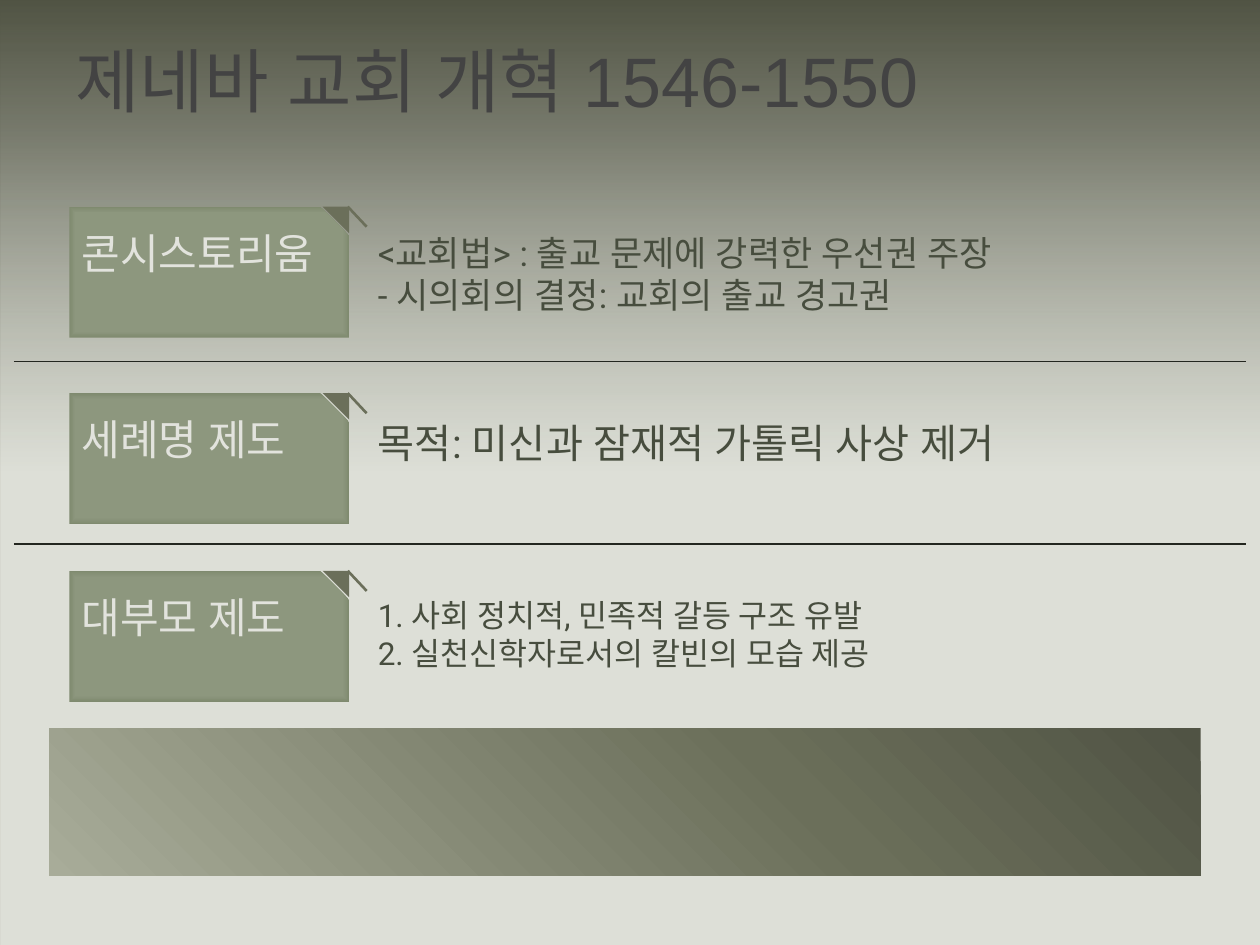
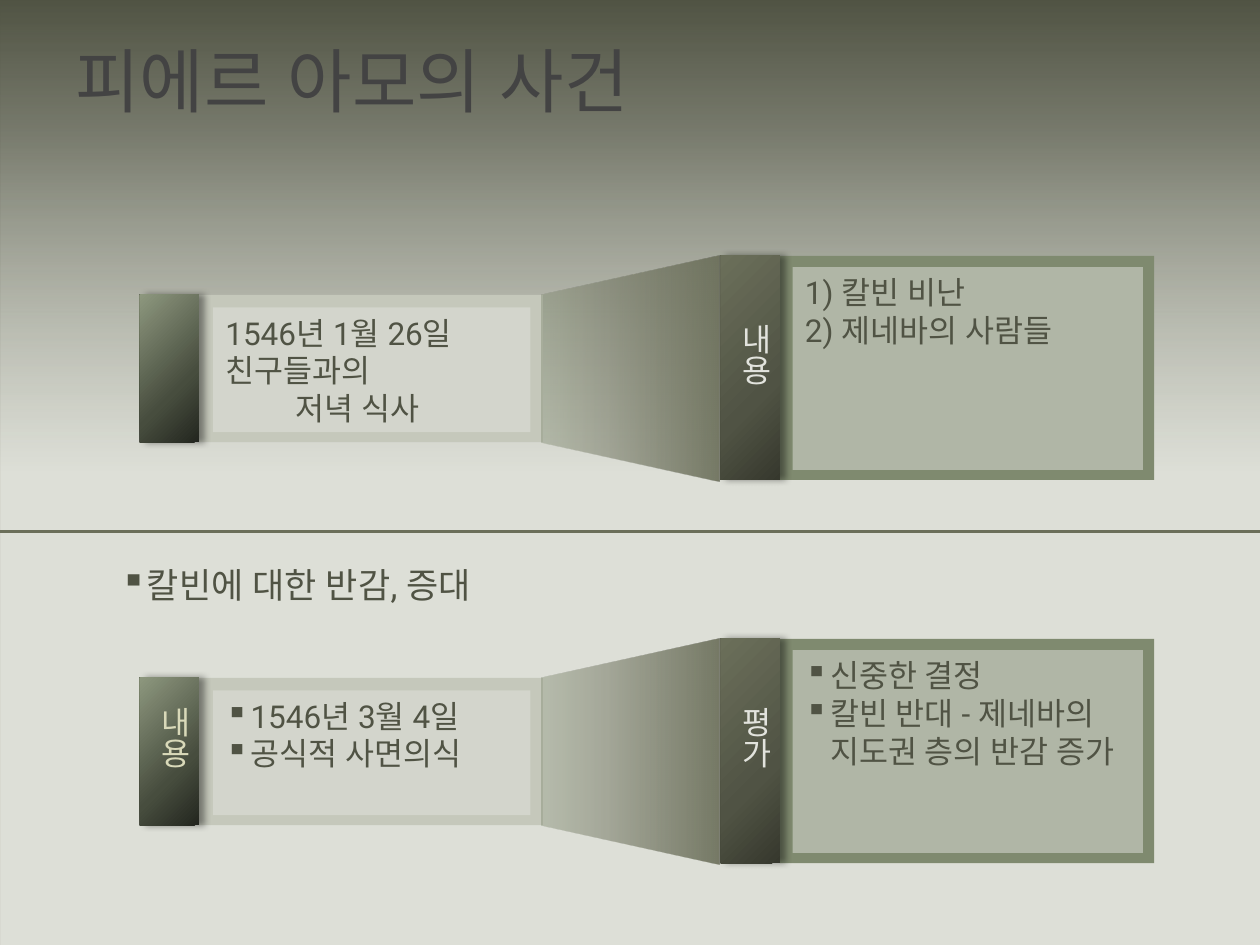
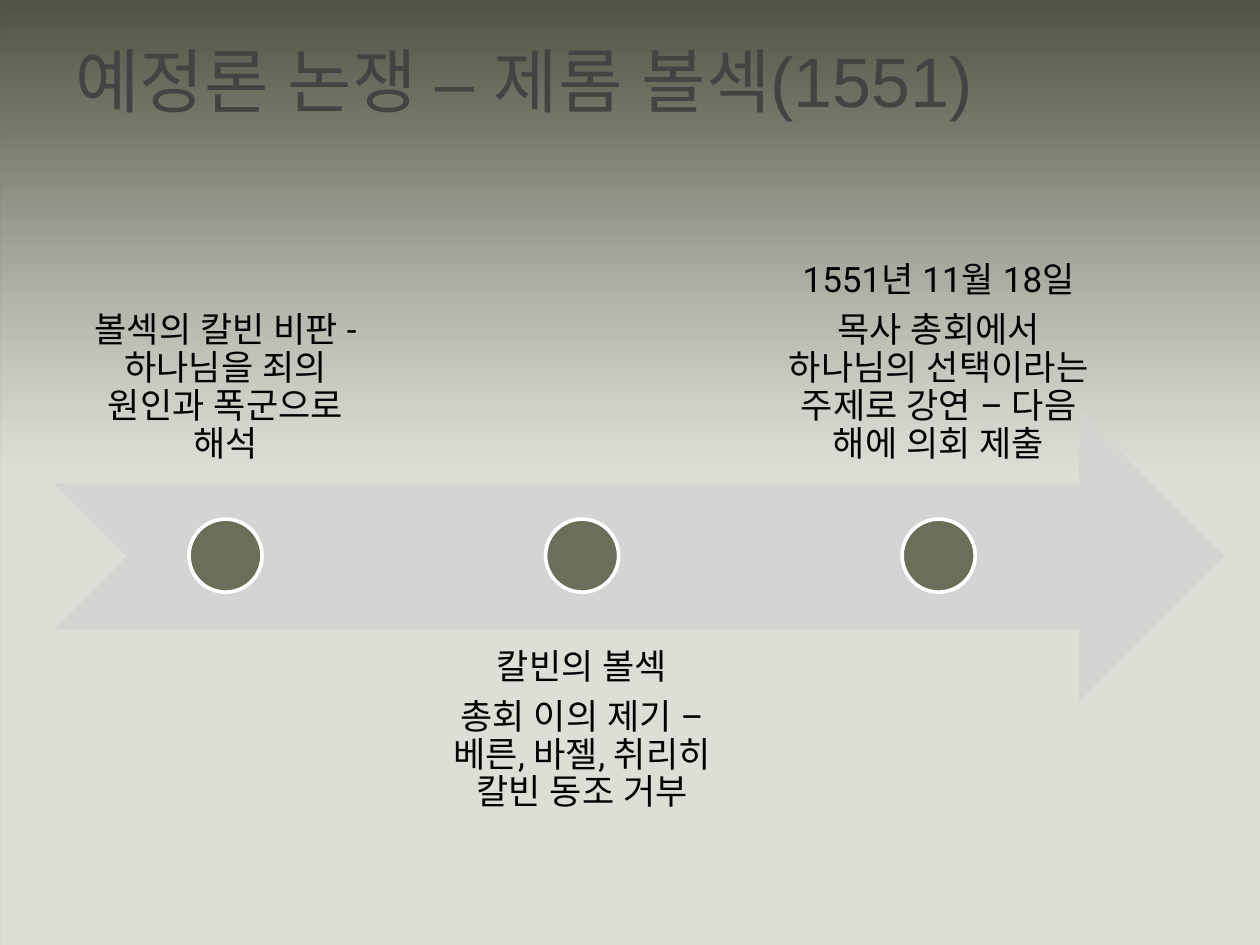
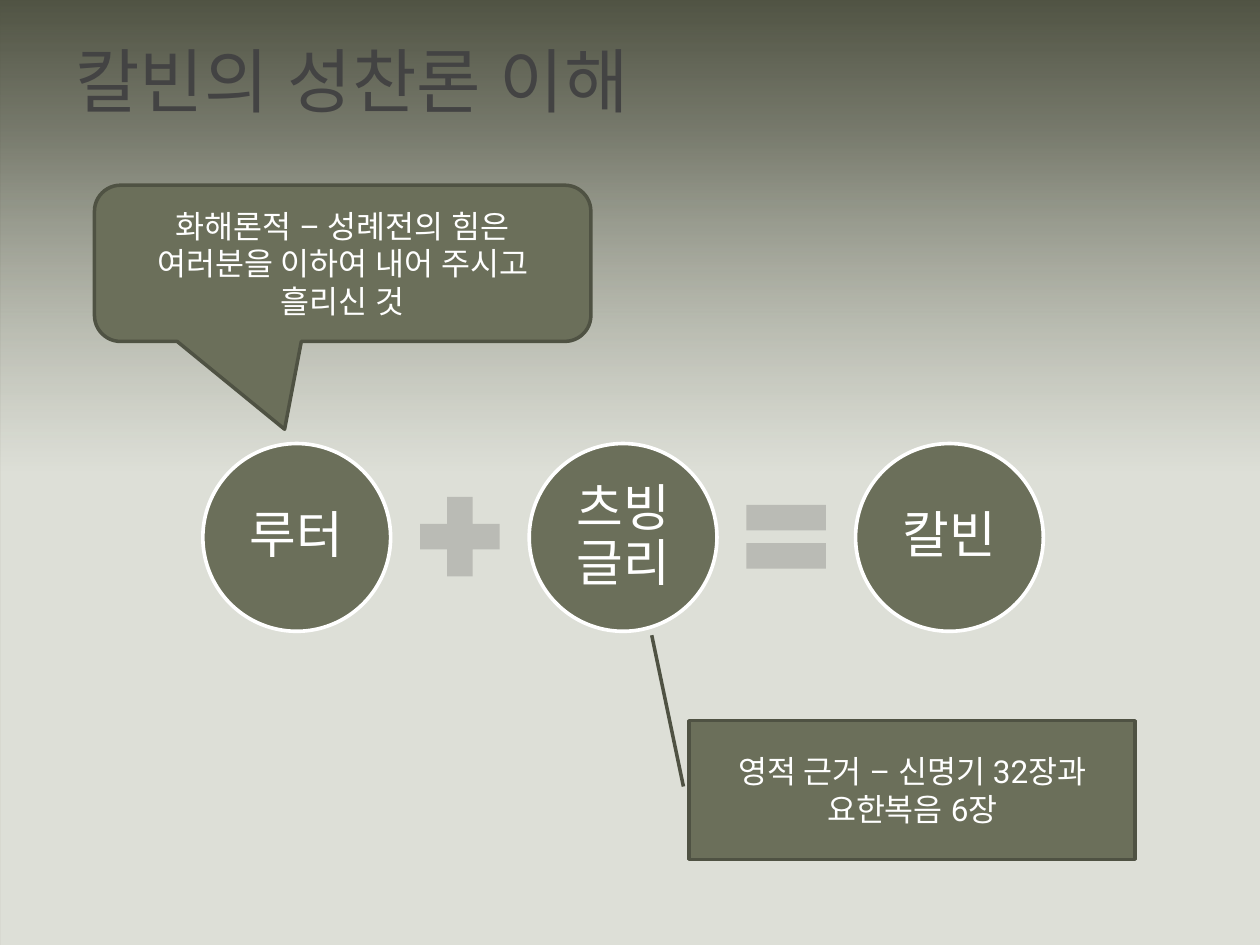
from pptx import Presentation
from pptx.dml.color import RGBColor
from pptx.enum.shapes import MSO_CONNECTOR, MSO_SHAPE
from pptx.enum.text import MSO_ANCHOR, MSO_AUTO_SIZE, PP_ALIGN
from pptx.oxml import parse_xml
from pptx.oxml.ns import nsdecls, qn
from pptx.util import Inches, Pt

# Grid: 10 columns by 7.5 rows, one inch per cell
COLS, ROWS = 10, 7.5

# Palette
OLIVE, DARK_OLIVE, EDGE = "6B6F5A", "505344", "4F5243"
SAGE, MOSS, FOREST, INK = "8D977E", "7F8A6F", "474D3E", "23261F"
STONE, PALE, MIST, WHITE = "A8AC99", "E2E3DD", "DDDFD7", "FFFFFF"
BODY_FONT, TITLE_FONT = "Roboto", "Arial"


# ---- Colour and fill ----
def rgb(hex_code):
    return RGBColor.from_string(hex_code)


def gradient(stops, angle=None, path="circle", focus=None):
    """Stops are (percent, colour[, opacity]); focus is l, t, r, b in percent."""
    gs = "".join(
        f'<a:gs pos="{pos * 1000}"><a:srgbClr val="{c}">'
        + "".join(f'<a:alpha val="{a * 1000}"/>' for a in alpha)
        + "</a:srgbClr></a:gs>" for pos, c, *alpha in stops)
    if focus:
        sides = " ".join(f'{k}="{v * 1000}"' for k, v in zip("ltrb", focus))
        way = f'<a:path path="{path}"><a:fillToRect {sides}/></a:path>'
    else:
        way = f'<a:lin ang="{angle * 60000}" scaled="0"/>'
    return (f'<a:gradFill {nsdecls("a")} rotWithShape="1">'
            f'<a:gsLst>{gs}</a:gsLst>{way}</a:gradFill>')


def veil(color, opacity):
    return (f'<a:solidFill {nsdecls("a")}><a:srgbClr val="{color}">'
            f'<a:alpha val="{opacity * 1000}"/></a:srgbClr></a:solidFill>')


def paint(sp, fill):
    """Fill with a hex colour or with fill markup."""
    if fill.startswith("<"):
        sp.fill.background()
        blank = sp._element.spPr.find(qn("a:noFill"))
        blank.getparent().replace(blank, parse_xml(fill))
    else:
        sp.fill.solid()
        sp.fill.fore_color.rgb = rgb(fill)


TAG_FILL = gradient([(0, SAGE), (90, SAGE), (100, MOSS)],
                    path="rect", focus=(50, 50, 50, 50))
BAR_FILL = gradient([(0, STONE), (64, OLIVE), (100, DARK_OLIVE)],
                    focus=(0, 100, 100, 0))
GREEN_TAB = gradient([(0, SAGE), (64, FOREST), (100, INK)],
                     focus=(0, 0, 100, 100))
OLIVE_TAB = gradient([(0, OLIVE), (64, DARK_OLIVE), (100, "36382D")],
                     focus=(0, 0, 100, 100))
FUNNEL_FILL = gradient([(0, MOSS, 41), (38, OLIVE, 50), (100, OLIVE, 90)],
                       angle=90)


# ---- Elements ----
def place(at):
    return [Inches(v) for v in at]


def add_text(sp, lines, size=18, color=DARK_OLIVE, font=BODY_FONT,
             align=PP_ALIGN.LEFT, anchor=MSO_ANCHOR.TOP, wrap=True, inset=None,
             bullet=None, hang=0, before=0, after=0, spacing=None, vert=None):
    """A line is text, or (text, left indent) for a line set further in."""
    tf = sp.text_frame
    tf.word_wrap, tf.vertical_anchor = wrap, anchor
    if inset is not None:
        tf.margin_left = tf.margin_top = Inches(inset)
        tf.margin_right = tf.margin_bottom = Inches(inset)
    if vert:
        tf._txBody.bodyPr.set("vert", vert)
    for i, line in enumerate(lines):
        text, indent = line if isinstance(line, tuple) else (line, None)
        p = tf.paragraphs[0] if i == 0 else tf.add_paragraph()
        p.alignment, p.line_spacing = align, spacing
        p.space_before, p.space_after = Pt(before), Pt(after)
        pPr = p._p.get_or_add_pPr()
        if indent or hang:
            pPr.set("marL", str(Inches(indent or hang)))
            pPr.set("indent", str(0 if indent else -Inches(hang)))
        if bullet:
            pPr.append(parse_xml(f'<a:buChar {nsdecls("a")} char="{bullet}"/>'))
        r = p.add_run()
        r.text = text
        r.font.size, r.font.name = Pt(size), font
        r.font.color.rgb = rgb(color)
        r._r.get_or_add_rPr().append(
            parse_xml(f'<a:ea {nsdecls("a")} typeface="{font}"/>'))


def add_box(shapes, kind, at, fill, line=None, width=2, adj=(), rotation=0,
            flip=False, shadow=False, lines=(), **fmt):
    sp = shapes.add_shape(kind, *place(at))
    sp.shadow.inherit = False
    paint(sp, fill)
    if line:
        sp.line.color.rgb, sp.line.width = rgb(line), Pt(width)
    else:
        sp.line.fill.background()
    for i, value in enumerate(adj):
        sp.adjustments[i] = value
    sp.rotation = rotation
    spPr = sp._element.spPr
    if flip:
        spPr.get_or_add_xfrm().set("flipH", "1")
    if shadow:
        spPr.find(qn("a:effectLst")).append(parse_xml(
            f'<a:outerShdw {nsdecls("a")} blurRad="{Pt(4)}" dist="{Pt(3)}" '
            'dir="0" algn="l" rotWithShape="0"><a:srgbClr val="000000">'
            '<a:alpha val="40000"/></a:srgbClr></a:outerShdw>'))
    if lines:
        add_text(sp, lines, **fmt)
    return sp


def add_note(shapes, at, lines, grow=True, **fmt):
    tb = shapes.add_textbox(*place(at))
    add_text(tb, lines, **fmt)
    if grow:
        tb.text_frame.auto_size = MSO_AUTO_SIZE.SHAPE_TO_FIT_TEXT


def add_line(shapes, start, end, color, width):
    cx = shapes.add_connector(MSO_CONNECTOR.STRAIGHT, *place(start + end))
    cx.line.color.rgb, cx.line.width = rgb(color), Pt(width)
    cx._element.spPr.append(parse_xml(f'<a:effectLst {nsdecls("a")}/>'))


# ---- Shared look ----
def add_slide(prs, title):
    s = prs.slides.add_slide(prs.slide_layouts[5])
    sp = s.shapes.title
    sp.left, sp.top, sp.width, sp.height = place((0.5, 0.19, 9, 0.88))
    add_text(sp, [title], size=40, color="434343", font=TITLE_FONT,
             anchor=MSO_ANCHOR.MIDDLE)
    return s


def style_master(prs, s):
    """Colour the master and lay its two fading sheets behind everything."""
    master = prs.slide_master
    master.background.fill.solid()
    master.background.fill.fore_color.rgb = rgb("505343")
    sheets = [
        (1.09, [(0, STONE, 0), (50, STONE, 60), (100, STONE, 80)]),
        (0, [(0, MIST, 0), (50, MIST), (100, MIST)]),
    ]
    for i, (top, stops) in enumerate(sheets):
        sheet = add_box(s.shapes, MSO_SHAPE.RECTANGLE,
                        (0, top, COLS, ROWS - top), gradient(stops, angle=90))
        sheet._element.nvSpPr.cNvPr.set("id", str(100 + i))
        master.shapes._spTree.insert(2 + i, sheet._element)


# ---- Slide 1: tagged rows ----
def add_tag_row(s, top, label, lines, size, height):
    g = s.shapes.add_group_shape().shapes
    add_line(g, (2.76, top), (2.91, top + 0.16), OLIVE, 1.5)
    add_box(g, MSO_SHAPE.RIGHT_TRIANGLE, (2.56, top, 0.21, 0.21), OLIVE,
            rotation=270, flip=True)
    add_note(s.shapes, (2.9, top + 0.15, 6.09, height), lines,
             size=size, color=FOREST)
    add_box(s.shapes, MSO_SHAPE.SNIP_1_RECTANGLE, (0.55, top, 2.22, 1.04),
            TAG_FILL, adj=[0.22], lines=[label], size=24, color=PALE,
            wrap=False)


def build_reform(s):
    for y in (2.87, 4.32):
        add_line(s.shapes, (0.11, y), (COLS - 0.11, y), INK, 1)
    add_box(s.shapes, MSO_SHAPE.RECTANGLE, (0.39, 5.78, 9.14, 1.17), BAR_FILL)
    add_tag_row(s, 1.64, "콘시스토리움",
                ["<교회법> : 출교 문제에 강력한 우선권 주장",
                 "- 시의회의 결정: 교회의 출교 경고권"], 20, 0.77)
    add_tag_row(s, 3.12, "세례명 제도",
                ["목적: 미신과 잠재적 가톨릭 사상 제거"], 23, 0.49)
    add_tag_row(s, 4.53, "대부모 제도",
                ["1. 사회 정치적, 민족적 갈등 구조 유발",
                 "2. 실천신학자로서의 칼빈의 모습 제공"], 18, 0.7)


# ---- Slide 2: small panel widening into a large one ----
def add_panel(s, left, top, width, height, frame, tab, inner, lines, bullet,
              label, label_color):
    g = s.shapes.add_group_shape().shapes
    rect, tab_w = MSO_SHAPE.RECTANGLE, 0.47
    add_box(g, rect, (left + tab_w, top, width, height), frame)
    add_box(g, rect, (left, top, tab_w, height), tab, shadow=True)
    add_box(g, rect, inner, veil(PALE, 50), lines=lines, bullet=bullet,
            hang=0.2)
    return label and add_note(g, (left - 0.04, label[1], 0.52, 0.6),
                              [label[0]], color=label_color, wrap=False,
                              vert="eaVert")


def add_flow(s, top, cause, effect, cause_label, effect_label, bullet=None):
    label_top = top + 0.44
    add_panel(s, 1.11, top + 0.31, 2.73, 1.17, "C5C8BB", GREEN_TAB,
              (1.69, top + 0.41, 2.52, 0.99), cause, bullet,
              cause_label and (cause_label, label_top), "D9D9B9")
    add_box(s.shapes, MSO_SHAPE.TRAPEZOID, (4.11, top + 0.19, 1.79, 1.41),
            FUNNEL_FILL, adj=[0.22], rotation=270)
    add_panel(s, 5.72, top, 2.97, 1.78, MOSS, OLIVE_TAB,
              (6.29, top + 0.09, 2.78, 1.61), effect, bullet,
              (effect_label, label_top), PALE)


def build_affair(s):
    add_line(s.shapes, (COLS, 4.22), (0, 4.22), OLIVE, 1.5)
    add_flow(s, 2.03,
             ["1546년 1월 26일", "친구들과의", ("저녁 식사", 0.56)],
             ["1) 칼빈 비난", "2) 제네바의 사람들"], None, "내용")
    add_note(s.shapes, (0.86, 4.42, 8.26, 0.43), ["칼빈에 대한 반감, 증대"],
             size=20, bullet="▪", hang=0.2, before=1)
    add_flow(s, 5.07,
             ["1546년 3월 4일", "공식적 사면의식"],
             ["신중한 결정", "칼빈 반대 - 제네바의 지도권 층의 반감 증가"],
             "내용", "평가", bullet="▪")


# ---- Slide 3: timeline ----
def build_dispute(s):
    add_box(s.shapes, MSO_SHAPE.NOTCHED_RIGHT_ARROW, (0.43, 3.26, 9.29, 2.31),
            "D4D5D2", adj=[0.5, 0.5])
    events = [
        ["볼섹의 칼빈 비판 - 하나님을 죄의 원인과 폭군으로 해석"],
        ["칼빈의 볼섹",
         "총회 이의 제기 – 베른, 바젤, 취리히 칼빈 동조 거부"],
        ["1551년 11월 18일",
         "목사 총회에서 하나님의 선택이라는 주제로 강연 – 다음 해에 의회 제출"],
    ]
    step, width, dot = 2.83, 2.7, 0.58
    for i, lines in enumerate(events):
        left, below = 0.44 + i * step, i % 2
        add_note(s.shapes, (left, 4.99 if below else 1.53, width, 2.31), lines,
                 grow=False, size=20, color="000000", align=PP_ALIGN.CENTER,
                 anchor=MSO_ANCHOR.TOP if below else MSO_ANCHOR.BOTTOM,
                 inset=0.16, spacing=0.9, after=7)
        add_box(s.shapes, MSO_SHAPE.OVAL,
                (left + (width - dot) / 2, 4.12, dot, dot),
                OLIVE, line=WHITE, width=2.08)


# ---- Slide 4: equation with callouts ----
def build_supper(s):
    centred = dict(color=WHITE, align=PP_ALIGN.CENTER,
                   anchor=MSO_ANCHOR.MIDDLE)
    first, step, disc, sign = 1.61, 2.59, 1.49, 0.86
    for i, name in enumerate(["루터", "츠빙글리", "칼빈"]):
        add_box(s.shapes, MSO_SHAPE.OVAL, (first + i * step, 3.52, disc, disc),
                OLIVE, line=WHITE, width=2.08, lines=[name], size=29,
                inset=0.04, spacing=0.9, **centred)
    signs = [(MSO_SHAPE.MATH_PLUS, [0.235]),
             (MSO_SHAPE.MATH_EQUAL, [0.235, 0.118])]
    for i, (kind, adj) in enumerate(signs):
        add_box(s.shapes, kind, (3.22 + i * step, 3.83, sign, sign), "BABBB5",
                adj=adj)
    add_box(s.shapes, MSO_SHAPE.LINE_CALLOUT_1, (5.47, 5.72, 3.54, 1.1), OLIVE,
            line=EDGE, adj=[0.475, -0.013, -0.617, -0.084],
            lines=["영적 근거 – 신명기 32장과 요한복음 6장"], **centred)
    add_box(s.shapes, MSO_SHAPE.ROUNDED_RECTANGULAR_CALLOUT,
            (0.75, 1.47, 3.94, 1.24), OLIVE, line=EDGE,
            adj=[-0.117, 1.062, 0.167],
            lines=["화해론적 – 성례전의 힘은 여러분을 이하여 내어 주시고 흘리신 것"],
            **centred)


def main():
    prs = Presentation()
    prs.slide_width, prs.slide_height = Inches(COLS), Inches(ROWS)
    pages = [
        ("제네바 교회 개혁 1546-1550", build_reform),
        ("피에르 아모의 사건", build_affair),
        ("예정론 논쟁 – 제롬 볼섹(1551)", build_dispute),
        ("칼빈의 성찬론 이해", build_supper),
    ]
    for i, (title, build) in enumerate(pages):
        s = add_slide(prs, title)
        if i == 0:
            style_master(prs, s)
        build(s)
    prs.save("out.pptx")


if __name__ == "__main__":
    main()
